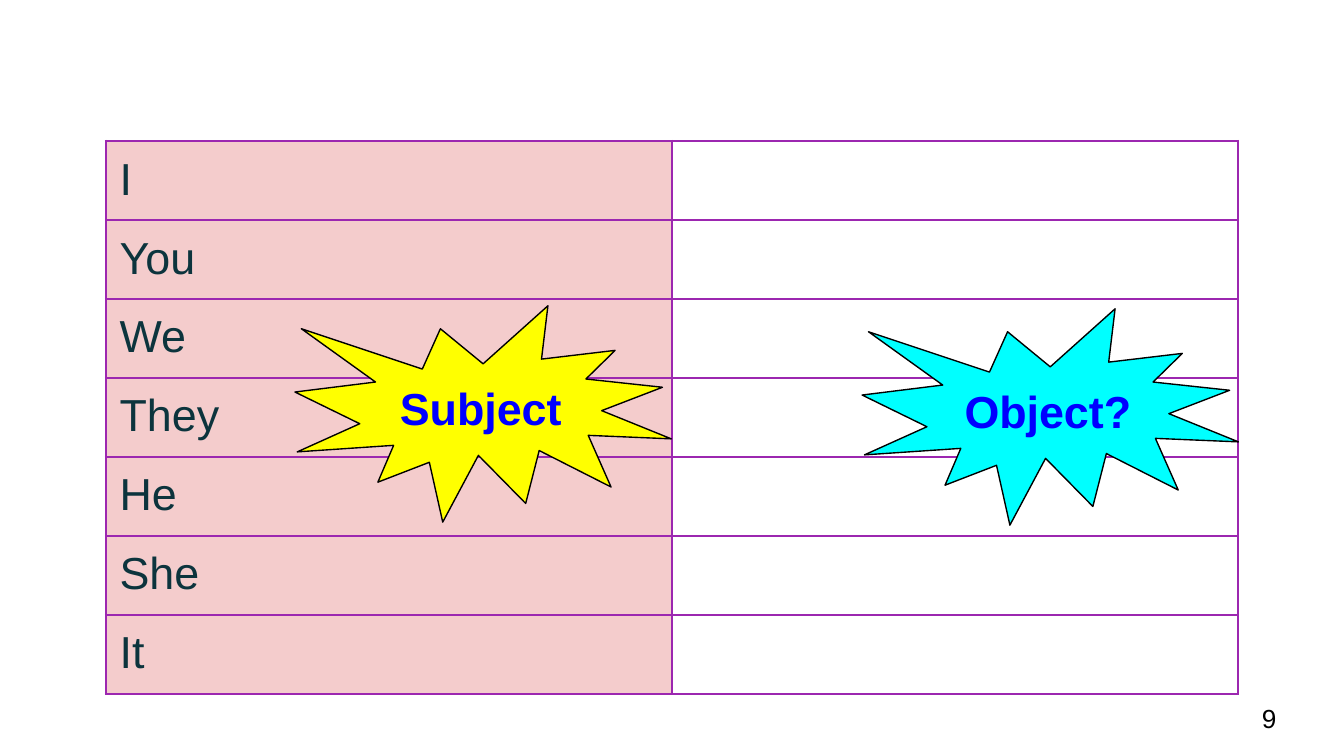
from lxml.etree import SubElement
from pptx import Presentation
from pptx.dml.color import RGBColor
from pptx.enum.shapes import MSO_SHAPE as Shape
from pptx.enum.text import MSO_ANCHOR as Anchor, PP_ALIGN as Align
from pptx.oxml.ns import qn
from pptx.util import Emu, Pt

EMU_PER_PX = 2286
PADDING = 40
FONT = "Arial"
PRONOUNS = ["I", "You", "We", "They", "He", "She", "It"]
COLUMN_WIDTH = 1684
ROW_HEIGHT = 235
BORDER_COLOR = "9C27B0"


def px(length):
    return Emu(length * EMU_PER_PX)


def color(value):
    return RGBColor.from_string(value)


def set_margins(target):
    target.margin_left = target.margin_right = px(PADDING)
    target.margin_top = target.margin_bottom = px(PADDING)


def write_text(frame, text, size, font_color, bold=False, align=Align.LEFT):
    paragraph = frame.paragraphs[0]
    paragraph.text = text
    paragraph.alignment = align
    paragraph.font.name = FONT
    paragraph.font.size = Pt(size)
    paragraph.font.bold = bold
    paragraph.font.color.rgb = color(font_color)


def add_borders(cell):
    properties = cell._tc.get_or_add_tcPr()
    for side in ("lnL", "lnR", "lnT", "lnB"):
        line = SubElement(properties, qn(f"a:{side}"), w=str(Pt(1.5)))
        fill = SubElement(line, qn("a:solidFill"))
        SubElement(fill, qn("a:srgbClr"), val=BORDER_COLOR)


def add_pronoun_table(slide):
    rows = len(PRONOUNS)
    table = slide.shapes.add_table(
        rows, 2, px(316), px(420), px(2 * COLUMN_WIDTH), px(rows * ROW_HEIGHT)
    ).table
    table.first_row = False
    table.horz_banding = False
    for row, pronoun in zip(table.rows, PRONOUNS):
        row.height = px(ROW_HEIGHT)
        subject, answer = row.cells
        for cell in (subject, answer):
            set_margins(cell)
            add_borders(cell)
        subject.fill.solid()
        subject.fill.fore_color.rgb = color("F4CCCC")
        answer.fill.background()
        write_text(subject.text_frame, pronoun, 24, "0C343D")


def add_burst(slide, left, top, text, fill_color):
    shape = slide.shapes.add_shape(
        Shape.EXPLOSION1, px(left), px(top), px(1120), px(644)
    )
    shape.shadow.inherit = False
    shape.fill.solid()
    shape.fill.fore_color.rgb = color(fill_color)
    shape.line.color.rgb = color("000000")
    shape.line.width = Pt(0.75)
    frame = shape.text_frame
    set_margins(frame)
    frame.word_wrap = True
    frame.vertical_anchor = Anchor.MIDDLE
    write_text(frame, text, 24, "0000FF", bold=True, align=Align.CENTER)


def add_page_number(slide, number):
    frame = slide.shapes.add_textbox(px(3716), px(2052), px(240), px(172)).text_frame
    set_margins(frame)
    frame.word_wrap = True
    frame.vertical_anchor = Anchor.MIDDLE
    write_text(frame, number, 14, "000000")


def main():
    presentation = Presentation()
    presentation.slide_width = px(4000)
    presentation.slide_height = px(2250)
    slide = presentation.slides.add_slide(presentation.slide_layouts[6])
    add_pronoun_table(slide)
    add_burst(slide, 878, 910, "Subject", "FFFF00")
    add_burst(slide, 2566, 919, "Object?", "00FFFF")
    add_page_number(slide, "9")
    presentation.save("out.pptx")


if __name__ == "__main__":
    main()
